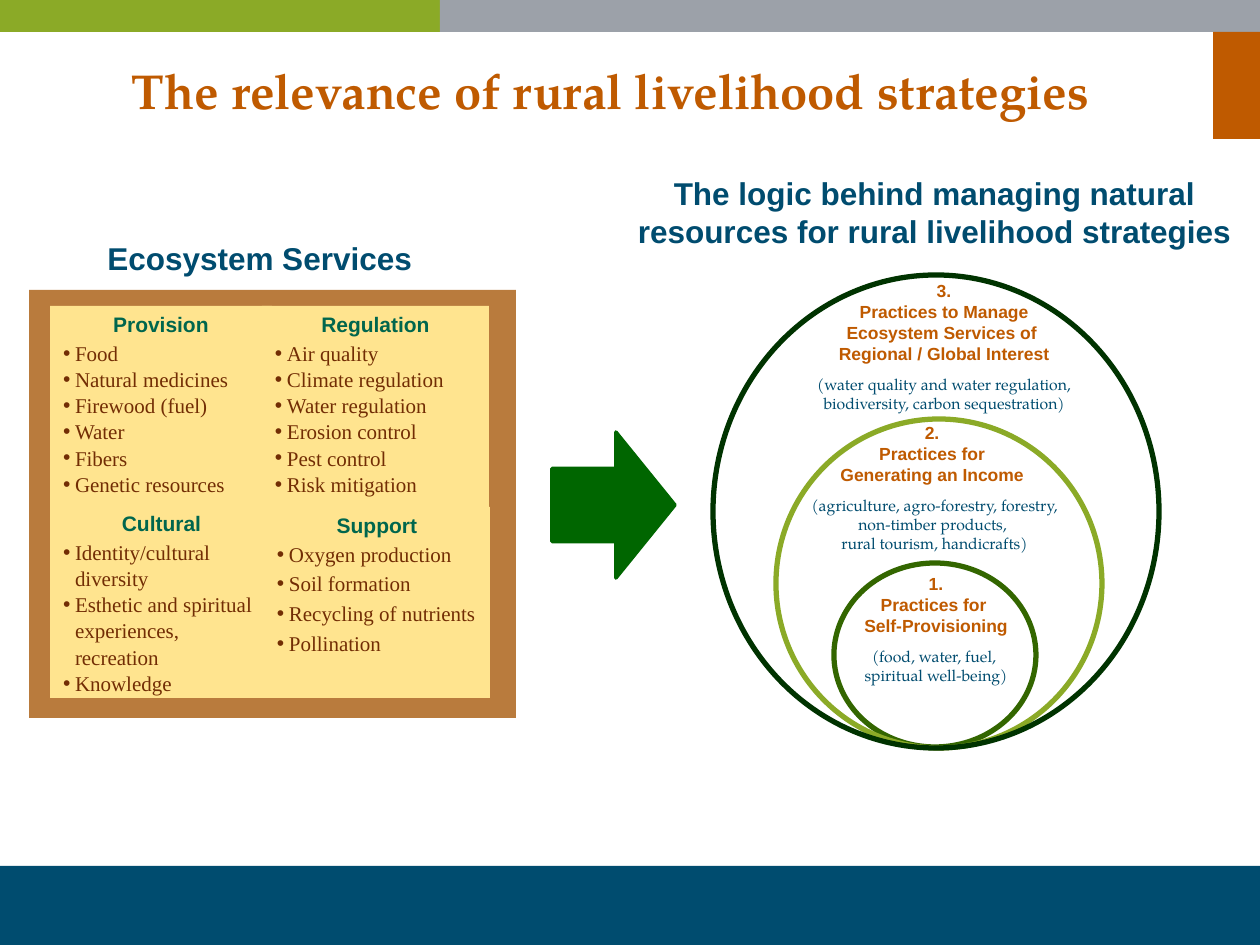
from dataclasses import dataclass
from typing import NamedTuple

from lxml import etree
from pptx import Presentation
from pptx.dml.color import RGBColor
from pptx.enum.shapes import MSO_SHAPE
from pptx.enum.text import MSO_ANCHOR, MSO_AUTO_SIZE, PP_ALIGN
from pptx.oxml.ns import qn
from pptx.util import Emu, Pt

RECTANGLE, OVAL, ARROW = MSO_SHAPE.RECTANGLE, MSO_SHAPE.OVAL, MSO_SHAPE.RIGHT_ARROW
TOP, MIDDLE = MSO_ANCHOR.TOP, MSO_ANCHOR.MIDDLE
LEFT, CENTER = PP_ALIGN.LEFT, PP_ALIGN.CENTER
NO_AUTOFIT = MSO_AUTO_SIZE.NONE
EMU_PER_PX = 914400 / 126
PAGE_WIDTH, PAGE_HEIGHT = 1260, 945
BULLET_INDENT = 12


class Box(NamedTuple):
    """A rectangle in px."""
    left: int
    top: int
    width: int
    height: int

    def inner(self, left, top, width, height):
        """Return a box placed relative to this one."""
        return Box(self.left + left, self.top + top, width, height)


class Style(NamedTuple):
    """The look of a span of text."""
    font: str
    size: int
    color: str
    bold: bool


@dataclass(frozen=True)
class Theme:
    """Colours and type styles of the page."""
    blue: str = "004C6F"
    lime: str = "8BAA27"
    gray: str = "9CA1A9"
    orange: str = "BF5A00"
    brown: str = "B97B3D"
    cream: str = "FFE48F"
    arrow: str = "006600"
    title: Style = Style("TeX Gyre Pagella", 28, "BF5A00", True)
    heading: Style = Style("Arial", 18, "004C6F", True)
    service: Style = Style("Arial", 12, "00664D", True)
    item: Style = Style("Times New Roman", 12, "722D04", False)
    practice: Style = Style("Arial", 10, "BF5A00", True)
    example: Style = Style("TeX Gyre Pagella", 9, "004C6F", False)


THEME = Theme()

SERVICES = [
    (Box(233, 16, 227, 202), "Regulation", 0,
     ["Air quality", "Climate regulation", "Water regulation", "Erosion control",
      "Pest control", "Risk mitigation"]),
    (Box(21, 16, 222, 202), "Provision", 0,
     ["Food", "Natural medicines", "Firewood (fuel)", "Water", "Fibers",
      "Genetic resources"]),
    (Box(235, 217, 226, 191), "Support", 2,
     ["Oxygen production", "Soil formation", "Recycling of nutrients", "Pollination"]),
    (Box(21, 215, 223, 193), "Cultural", 0,
     ["Identity/cultural diversity", "Esthetic and spiritual experiences, recreation",
      "Knowledge"]),
]

PRACTICES = [
    (Box(121, 288, 202, 184), "336600", Box(127, 293, 192, 141),
     ["1.", "Practices for ", "Self-Provisioning"],
     ["(food, water, fuel, ", "spiritual well-being)"]),
    (Box(63, 144, 326, 329), "8BAA27", Box(83, 142, 277, 140),
     ["2. ", "Practices for ", "Generating an Income "],
     ["(agriculture, agro-forestry, forestry, non-timber products, ",
      "rural tourism, handicrafts)"]),
    (Box(0, 0, 446, 473), "003300", Box(79, 0, 304, 147),
     ["3.", "Practices to Manage", "Ecosystem Services of ", "Regional / Global Interest"],
     ["(water quality and water regulation, biodiversity, carbon sequestration)"]),
]


def px(length):
    """Turn px into EMU."""
    return Emu(round(length * EMU_PER_PX))


def place(shape, box):
    """Move and size a shape to its box."""
    shape.left, shape.top, shape.width, shape.height = map(px, box)


def add_figure(page, kind, box, fill=None, line=None, weight=0):
    """Add a preset shape without a shadow."""
    shape = page.shapes.add_shape(kind, *map(px, box))
    shape.shadow.inherit = False
    if fill:
        shape.fill.solid()
        shape.fill.fore_color.rgb = RGBColor.from_string(fill)
    else:
        shape.fill.background()
    if line:
        shape.line.color.rgb = RGBColor.from_string(line)
        shape.line.width = Pt(weight)
    else:
        shape.line.fill.background()
    return shape


def prepare_frame(shape, anchor, side=13, edge=6):
    """Set wrapping, anchor and margins and return the text frame."""
    frame = shape.text_frame
    frame.word_wrap = True
    frame.auto_size = NO_AUTOFIT
    frame.vertical_anchor = anchor
    frame.margin_left = frame.margin_right = px(side)
    frame.margin_top = frame.margin_bottom = px(edge)
    return frame


def write(para, lines, style, align=CENTER, before=0, after=0):
    """Fill a paragraph with lines of one style."""
    para.alignment = align
    para.space_before, para.space_after = Pt(before), Pt(after)
    for number, line in enumerate(lines):
        if number:
            para.add_line_break()
        span = para.add_run()
        span.text = line
        span.font.name = style.font
        span.font.size = Pt(style.size)
        span.font.bold = style.bold
        span.font.color.rgb = RGBColor.from_string(style.color)


def add_bullet(para):
    """Give a paragraph a hanging bullet."""
    properties = para._p.get_or_add_pPr()
    properties.set("marL", str(px(BULLET_INDENT)))
    properties.set("indent", str(-px(BULLET_INDENT)))
    etree.SubElement(properties, qn("a:buFont")).set("typeface", "Arial")
    etree.SubElement(properties, qn("a:buChar")).set("char", "•")


def add_heading(page, box, text):
    """Add a section heading centred in its box."""
    shape = page.shapes.add_textbox(*map(px, box))
    write(prepare_frame(shape, MIDDLE).paragraphs[0], [text], THEME.heading)


def add_bands(page, box):
    """Add the coloured bands at the edges of the page."""
    split, depth, footer = 440, 32, 79
    bands = [
        (box.inner(0, box.height - footer, box.width, footer), THEME.blue),
        (box.inner(0, 0, split, depth), THEME.lime),
        (box.inner(split, 0, box.width - split, depth), THEME.gray),
        (box.inner(box.width - 47, depth, 47, 107), THEME.orange),
    ]
    for band, color in bands:
        add_figure(page, RECTANGLE, band, color)


def add_title(page, box):
    """Fill the title placeholder."""
    title = page.shapes.title
    place(title, box)
    write(prepare_frame(title, MIDDLE).paragraphs[0],
          ["The relevance of rural livelihood strategies"], THEME.title)


def add_services(page, box):
    """Add the framed panels of ecosystem services."""
    add_figure(page, RECTANGLE, box, THEME.brown)
    for offset, name, gap, items in SERVICES:
        panel = add_figure(page, RECTANGLE, box.inner(*offset), THEME.cream)
        frame = prepare_frame(panel, TOP)
        write(frame.paragraphs[0], [name], THEME.service, before=1.2, after=1.2)
        for item in items:
            para = frame.add_paragraph()
            write(para, [item], THEME.item, LEFT, after=gap)
            para.line_spacing = 1.04
            add_bullet(para)


def add_practices(page, box):
    """Add the nested circles of practices and their labels."""
    for ring, color, *_ in PRACTICES:
        add_figure(page, OVAL, box.inner(*ring), line=color, weight=3)
    for _, _, label, name, examples in PRACTICES:
        shape = page.shapes.add_textbox(*map(px, box.inner(*label)))
        frame = prepare_frame(shape, TOP, 10, 5)
        write(frame.paragraphs[0], name, THEME.practice, after=6)
        write(frame.add_paragraph(), examples, THEME.example, after=10)


def add_arrow(page, box):
    """Add the arrow from services to practices."""
    arrow = add_figure(page, ARROW, box, THEME.arrow, THEME.arrow, 2)
    arrow.adjustments[0], arrow.adjustments[1] = 0.5, 0.48


def main():
    """Build the deck."""
    deck = Presentation()
    deck.slide_width, deck.slide_height = px(PAGE_WIDTH), px(PAGE_HEIGHT)
    page = deck.slides.add_slide(deck.slide_layouts[5])
    add_bands(page, Box(0, 0, PAGE_WIDTH, PAGE_HEIGHT))
    add_title(page, Box(0, 42, 1221, 96))
    add_heading(page, Box(48, 208, 432, 100), "Ecosystem Services ")
    add_services(page, Box(29, 290, 487, 428))
    add_heading(page, Box(609, 152, 651, 120),
                "The logic behind managing natural resources for rural livelihood strategies")
    add_practices(page, Box(713, 275, 446, 473))
    add_arrow(page, Box(552, 432, 123, 146))
    deck.save("out.pptx")


if __name__ == "__main__":
    main()
